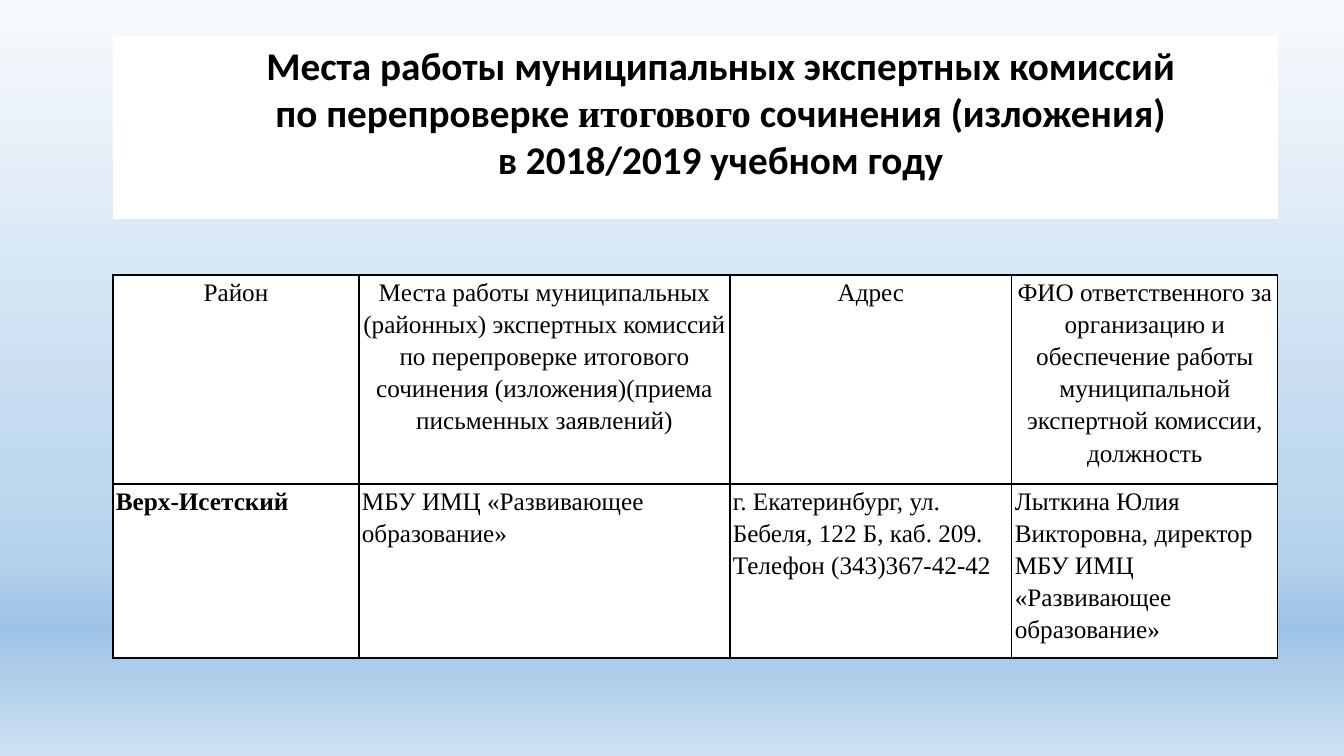
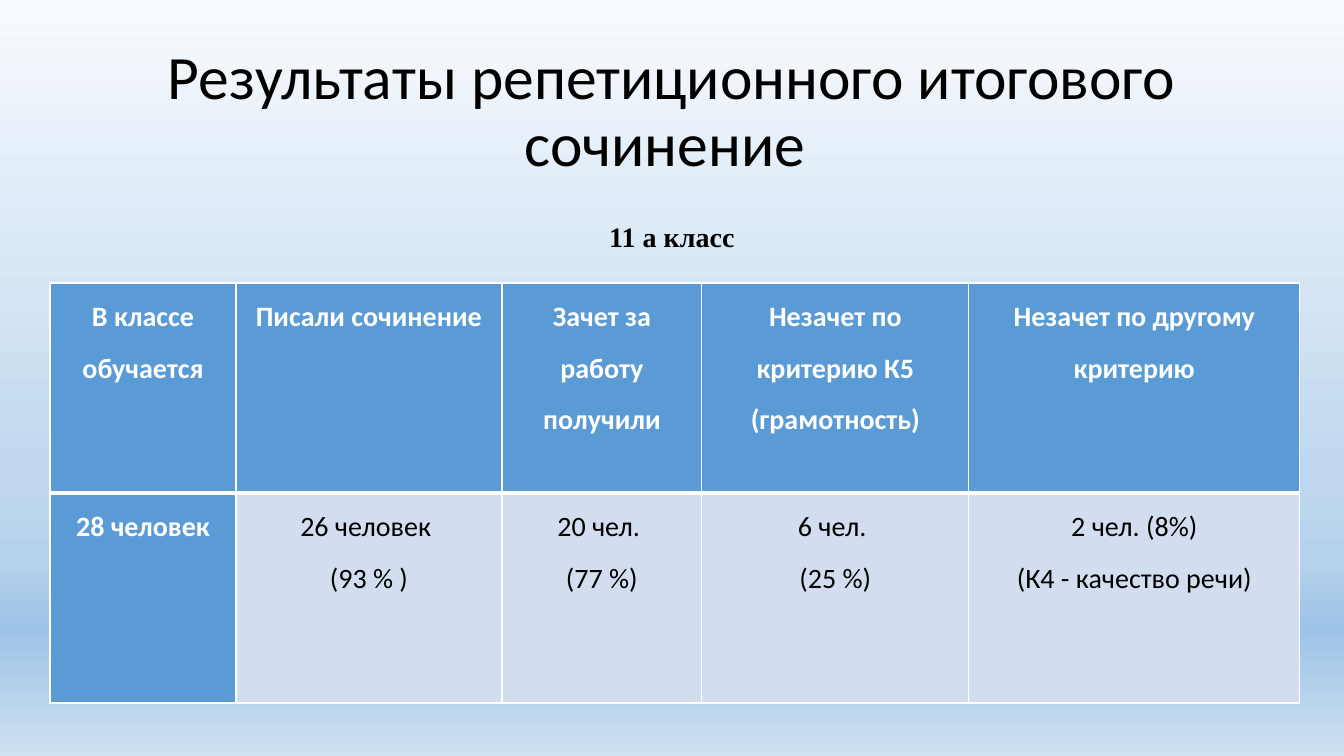
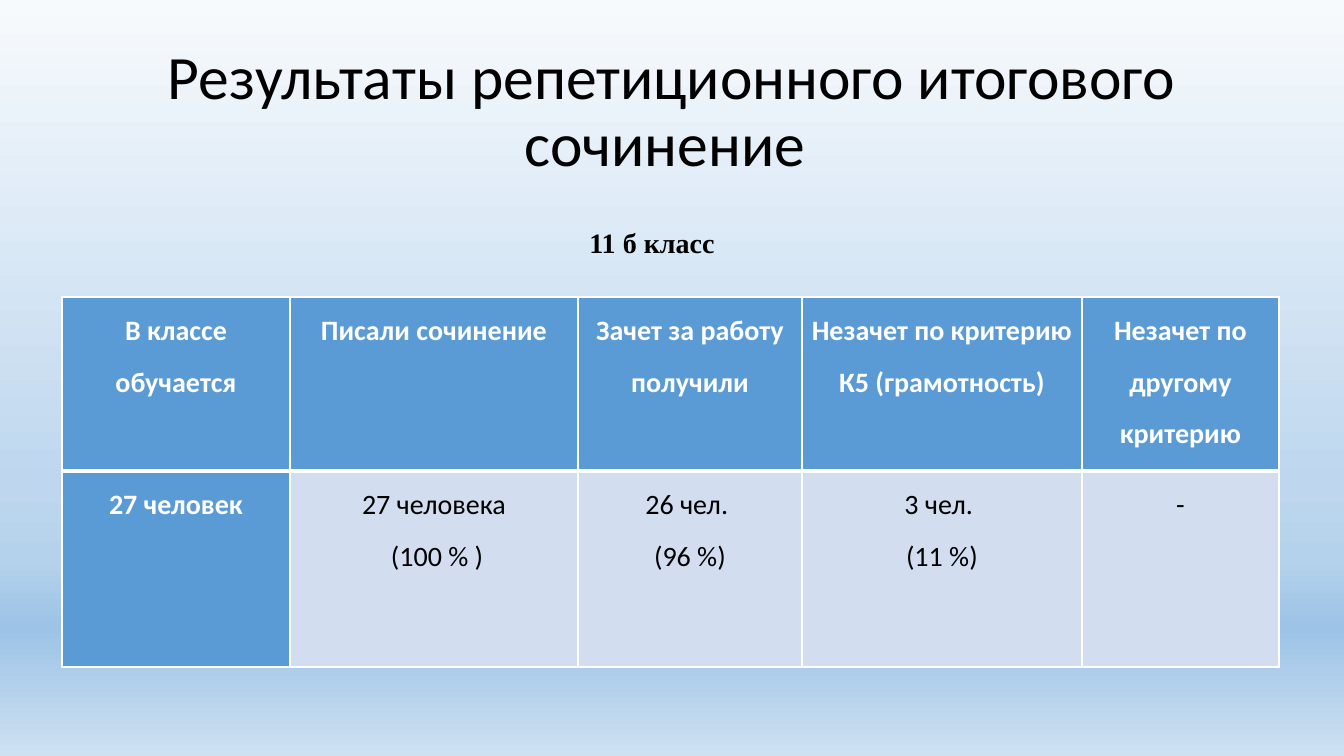
import pptx
import pptx.dml.color
import pptx.enum.shapes
import pptx.enum.text
import pptx.oxml.ns
import pptx.util
from lxml import etree

COLORS = {"black": "000000", "white": "FFFFFF", "header": "5B9BD5", "body": "D2DEEF"}
SKY = [(0, "F7FAFD"), (64, "BED7EE"), (74, "B5D2EC"), (83, "9DC3E6"), (100, "CEE1F2")]
SANS, SERIF = "Calibri", "Times New Roman"
CENTER = pptx.enum.text.PP_ALIGN.CENTER
LEFT = pptx.enum.text.PP_ALIGN.LEFT
RESULT_TITLE = "Результаты репетиционного итогового сочинение "
RESULT_HEADERS = [
    "В классе обучается",
    "Писали сочинение",
    "Зачет за работу получили",
    "Незачет по критерию К5 (грамотность)",
    "Незачет по другому критерию",
]
qn = pptx.oxml.ns.qn


def px(length):
    return pptx.util.Emu(round(length * 914400 / 100.8))


def rgb(name):
    return pptx.dml.color.RGBColor.from_string(COLORS[name])


def set_margins(target, left, top, right, bottom):
    target.margin_left, target.margin_top = px(left), px(top)
    target.margin_right, target.margin_bottom = px(right), px(bottom)


def write(frame, text, size, font, color="black", bold=False, align=CENTER, spacing=1.0):
    """Fill a text frame; each line of text becomes a paragraph."""
    frame.word_wrap = True
    frame.text = text
    for paragraph in frame.paragraphs:
        paragraph.alignment = align
        paragraph.line_spacing = spacing
        paragraph.font.size = pptx.util.Pt(size)
        paragraph.font.name = font
        paragraph.font.bold = bold
        paragraph.font.color.rgb = rgb(color)


# Shared background, set on the master
def paint_background(master):
    fill = master.background.fill
    fill.gradient()
    fill.gradient_angle = 270
    stops = master.element.find(".//" + qn("a:gsLst"))
    for stop in list(stops):
        stops.remove(stop)
    for percent, value in SKY:
        stop = etree.SubElement(stops, qn("a:gs"), pos=str(percent * 1000))
        etree.SubElement(stop, qn("a:srgbClr"), val=value)


def add_label(slide, box, text, size, font, bold=False, spacing=1.0):
    label = slide.shapes.add_textbox(*map(px, box))
    frame = label.text_frame
    frame.vertical_anchor = pptx.enum.text.MSO_ANCHOR.MIDDLE
    write(frame, text, size, font, bold=bold, spacing=spacing)


def add_title_panel(slide, box, lines):
    """White panel; every line is a list of (text, font) runs."""
    panel = slide.shapes.add_shape(pptx.enum.shapes.MSO_SHAPE.RECTANGLE, *map(px, box))
    panel.shadow.inherit = False
    panel.fill.solid()
    panel.fill.fore_color.rgb = rgb("white")
    panel.line.fill.background()
    frame = panel.text_frame
    frame.vertical_anchor = pptx.enum.text.MSO_ANCHOR.MIDDLE
    set_margins(frame, 60, 5, 10, 36)
    write(frame, "\n".join("" for _ in lines), 28, SANS, bold=True)
    for paragraph, runs in zip(frame.paragraphs, lines):
        for text, font in runs:
            run = paragraph.add_run()
            run.text = text
            run.font.name = font
            run.font.size = pptx.util.Pt(28)
            run.font.bold = True
            run.font.color.rgb = rgb("black")


# Tables
def set_borders(cell, color, **widths):
    """Draw the borders L, R, T and B with widths in points."""
    properties = cell._tc.get_or_add_tcPr()
    for index, side in enumerate("LRTB"):
        line = etree.Element(qn("a:ln" + side), w=str(pptx.util.Pt(widths.get(side, 1))))
        fill = etree.SubElement(line, qn("a:solidFill"))
        etree.SubElement(fill, qn("a:srgbClr"), val=COLORS[color])
        properties.insert(index, line)


def add_grid(slide, left, top, columns, heights, rows, style_cell):
    frame = slide.shapes.add_table(
        len(rows), len(columns), px(left), px(top), px(sum(columns)), px(sum(heights)))
    table = frame.table
    table.first_row = table.horz_banding = False
    for column, width in zip(table.columns, columns):
        column.width = px(width)
    for row, height in zip(table.rows, heights):
        row.height = px(height)
    for r, texts in enumerate(rows):
        for c, text in enumerate(texts):
            style_cell(table.cell(r, c), text, r, c)


def fill_cell(cell, color, side_margin):
    cell.fill.solid()
    cell.fill.fore_color.rgb = rgb(color)
    set_margins(cell, side_margin, 0, side_margin, 0)


def place_cell(cell, text, row, column):
    fill_cell(cell, "white", 3)
    write(cell.text_frame, text, 18, SERIF, bold=row == 1 and column == 0,
          align=LEFT if row else CENTER, spacing=1.15)
    set_borders(cell, "black")


def result_cell(cell, text, row, column):
    is_header = row == 0 or column == 0
    fill_cell(cell, "header" if is_header else "body", 7)
    write(cell.text_frame, text, 20, SANS, "white" if is_header else "black",
          bold=is_header, spacing=1.5)
    set_borders(cell, "white", **({"T": 3} if row else {"B": 3}))


# Slides
def build_places(slide):
    add_title_panel(slide, (113, 36, 1165, 183), [
        [("Места работы муниципальных экспертных комиссий", SANS)],
        [("по перепроверке ", SANS), ("итогового", SERIF), (" сочинения (изложения)", SANS)],
        [("в 2018/2019 учебном году", SANS)],
    ])
    add_grid(slide, 113, 275, [246, 371, 282, 266], [209, 174], [
        ["Район",
         "Места работы муниципальных (районных) экспертных комиссий\n"
         "по перепроверке итогового сочинения (изложения)(приема письменных заявлений)",
         "Адрес",
         "ФИО ответственного за организацию и обеспечение работы "
         "муниципальной экспертной комиссии, должность"],
        ["Верх-Исетский",
         "МБУ ИМЦ «Развивающее образование»",
         "г. Екатеринбург, ул. Бебеля, 122 Б, каб. 209.\nТелефон (343)367-42-42",
         "Лыткина Юлия Викторовна, директор МБУ ИМЦ «Развивающее образование»"],
    ], place_cell)


def build_results(slide, group, group_at, table_at, columns, heights, values):
    add_label(slide, (92, 40, 1160, 146), RESULT_TITLE, 44, SANS, spacing=0.9)
    add_grid(slide, *table_at, columns, heights, [RESULT_HEADERS, values], result_cell)
    add_label(slide, (*group_at, 200, 50), group, 20, SERIF, bold=True)


def main():
    deck = pptx.Presentation()
    deck.slide_width, deck.slide_height = px(1344), px(756)
    paint_background(deck.slide_master)
    places, class_a, class_b = (
        deck.slides.add_slide(deck.slide_layouts[6]) for _ in range(3))
    build_places(places)
    build_results(
        class_a, "11 а класс", (572, 211), (50, 283),
        [186, 266, 200, 267, 331], [210, 210],
        ["28 человек", "26 человек \n(93 % )", "20 чел. \n(77 %)", "6 чел. \n(25 %)",
         "2 чел. (8%)\n(К4 - качество речи)"])
    build_results(
        class_b, "11 б класс", (552, 217), (62, 297),
        [228, 288, 224, 280, 197], [174, 196],
        ["27 человек", "27 человека\n (100 % )", "26 чел. \n(96 %)", "3 чел. \n(11 %)", "-"])
    deck.save("out.pptx")


if __name__ == "__main__":
    main()
